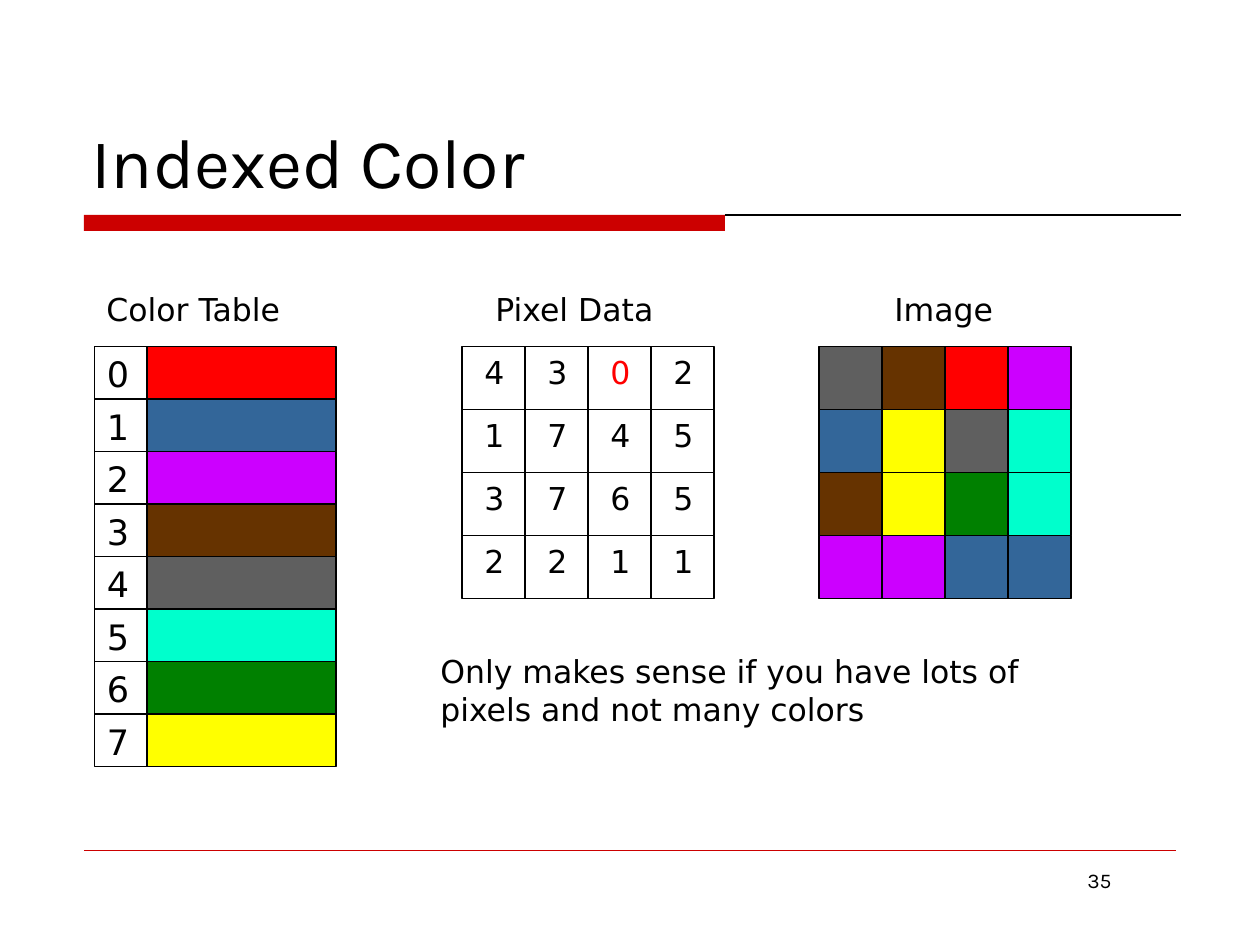
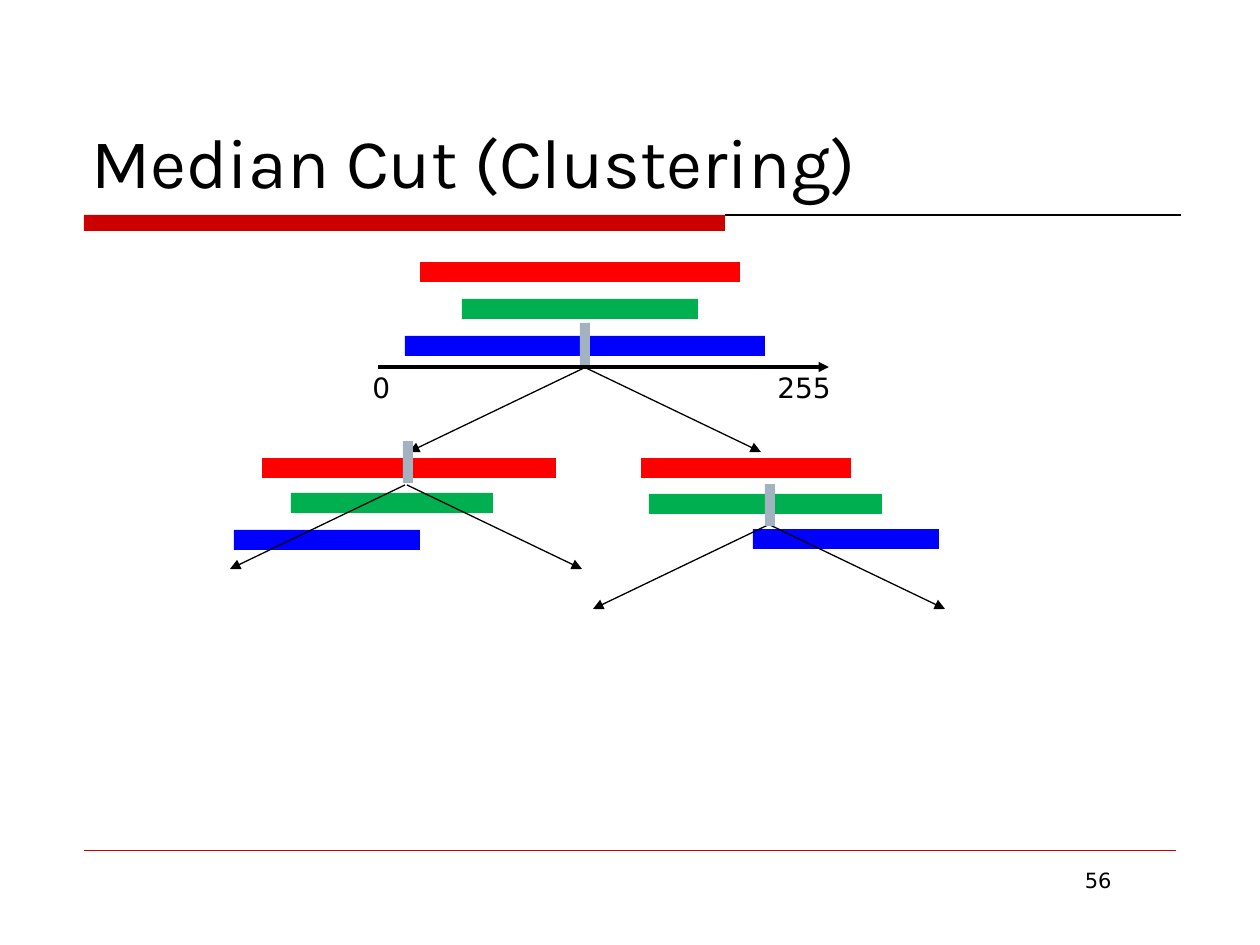
import pptx
import pptx.dml.color
import pptx.enum.shapes
import pptx.enum.text
import pptx.oxml.ns
import pptx.util
import lxml.etree

SCALE = 914400 / 126
BLACK = "000000"
BRAND_RED = "CC0000"
MARKER_GRAY = "A3B2C1"
HEADING_FONT = "Karla"
BODY_FONT = "DejaVu Sans"
BAR_COLORS = ["FF0000", "00B050", "0000FF"]
PALETTE = ["FF0000", "336699", "CC00FF", "663300", "5F5F5F", "00FFCC", "008000", "FFFF00"]
PIXELS = [[4, 3, 0, 2], [1, 7, 4, 5], [3, 7, 6, 5], [2, 2, 1, 1]]

color = pptx.dml.color.RGBColor.from_string
LEFT = pptx.enum.text.PP_ALIGN.LEFT
RIGHT = pptx.enum.text.PP_ALIGN.RIGHT
TOP = pptx.enum.text.MSO_ANCHOR.TOP
BOTTOM = pptx.enum.text.MSO_ANCHOR.BOTTOM


def add_text(slide, text, box, size=18, font=BODY_FONT, fill=BLACK, align=LEFT, anchor=TOP):
    shape = slide.shapes.add_textbox(*[round(value * SCALE) for value in box])
    shape.text_frame.word_wrap = True
    shape.text_frame.vertical_anchor = anchor
    paragraph = shape.text_frame.paragraphs[0]
    paragraph.alignment = align
    run = paragraph.add_run()
    run.text = text
    run.font.name = font
    run.font.size = pptx.util.Pt(size)
    run.font.color.rgb = color(fill)


def add_rectangle(slide, box, fill=None, outline=None):
    shape = slide.shapes.add_shape(
        pptx.enum.shapes.MSO_SHAPE.RECTANGLE, *[round(value * SCALE) for value in box])
    shape.shadow.inherit = False
    if fill:
        shape.fill.solid()
        shape.fill.fore_color.rgb = color(fill)
    else:
        shape.fill.background()
    if outline:
        shape.line.color.rgb = color(outline)
        shape.line.width = pptx.util.Pt(0.75)
    else:
        shape.line.fill.background()


presentation = pptx.Presentation()
presentation.slide_width = round(1260 * SCALE)
presentation.slide_height = round(945 * SCALE)

slides = []
lines = []
for title, number, number_font in [
    ("Indexed Color", "35", HEADING_FONT),
    ("Median Cut (Clustering)", "56", BODY_FONT),
]:
    slide = presentation.slides.add_slide(presentation.slide_layouts[6])
    add_rectangle(slide, (84, 215, 641, 16), fill=BRAND_RED)
    add_text(slide, title, (79, 42, 1103, 167), size=40, font=HEADING_FONT, anchor=BOTTOM)
    add_text(slide, number, (851, 861, 273, 65), size=12, font=number_font, align=RIGHT)
    lines.append((slide, (725, 215, 1181, 215), BLACK, 0.75, False))
    lines.append((slide, (84, 850, 1176, 850), BRAND_RED, 0.25, False))
    slides.append(slide)
indexed_slide, median_slide = slides

for heading, left, width in [("Color Table", 94, 227), ("Pixel Data", 483, 202), ("Image", 882, 130)]:
    add_text(indexed_slide, heading, (left, 284, width, 63))

for index, swatch in enumerate(PALETTE):
    top = 346.5 + 52.5 * index
    add_rectangle(indexed_slide, (147, top, 189, 52.5), fill=swatch, outline=BLACK)
    add_rectangle(indexed_slide, (94.5, top, 52.5, 52.5), outline=BLACK)
    add_text(indexed_slide, str(index), (94.5, top, 52.5, 54), size=20)

CELL = 63
for row, values in enumerate(PIXELS):
    for column, value in enumerate(values):
        left, top = column * CELL, 346.5 + row * CELL
        digit_color = BLACK if value else PALETTE[0]
        add_rectangle(indexed_slide, (462 + left, top, CELL, CELL), outline=BLACK)
        add_text(indexed_slide, str(value), (472 + left, top, 47, CELL), fill=digit_color)
        add_rectangle(indexed_slide, (819 + left, top, CELL, CELL), fill=PALETTE[value], outline=BLACK)

add_text(indexed_slide, "Only makes sense if you have lots of pixels and not many colors",
         (428, 646, 643, 113))

clusters = [
    [(420, 262, 320), (462, 299, 236), (405, 336, 360)],
    [(262, 458, 294), (291, 493, 202), (234, 530, 186)],
    [(641, 458, 210), (649, 494, 233), (753, 529, 186)],
]
for bars in clusters:
    for (left, top, width), bar_color in zip(bars, BAR_COLORS):
        add_rectangle(median_slide, (left, top, width, 20), fill=bar_color)

add_text(median_slide, "0", (360, 364, 44, 47), size=16)
add_text(median_slide, "255", (765, 364, 90, 47), size=16)
lines.append((median_slide, (378, 367, 829, 367), BLACK, 1.75, True))
for center, top in [(585, 368), (406, 485), (769, 525)]:
    for direction in (-1, 1):
        ends = (center + direction, top, center + 176 * direction, top + 84)
        lines.append((median_slide, ends, BLACK, 0.75, True))

for slide, ends, line_color, width, has_arrow in lines:
    connector = slide.shapes.add_connector(
        pptx.enum.shapes.MSO_CONNECTOR.STRAIGHT, *[round(value * SCALE) for value in ends])
    connector.line.color.rgb = color(line_color)
    connector.line.width = pptx.util.Pt(width)
    properties = connector._element.spPr
    if has_arrow:
        arrowhead = lxml.etree.SubElement(properties.find(pptx.oxml.ns.qn("a:ln")),
                                          pptx.oxml.ns.qn("a:tailEnd"))
        arrowhead.set("type", "triangle")
    lxml.etree.SubElement(properties, pptx.oxml.ns.qn("a:effectLst"))

for left, top in [(580, 323), (403, 441), (765, 484)]:
    add_rectangle(median_slide, (left, top, 10, 42), fill=MARKER_GRAY)

presentation.save("out.pptx")
